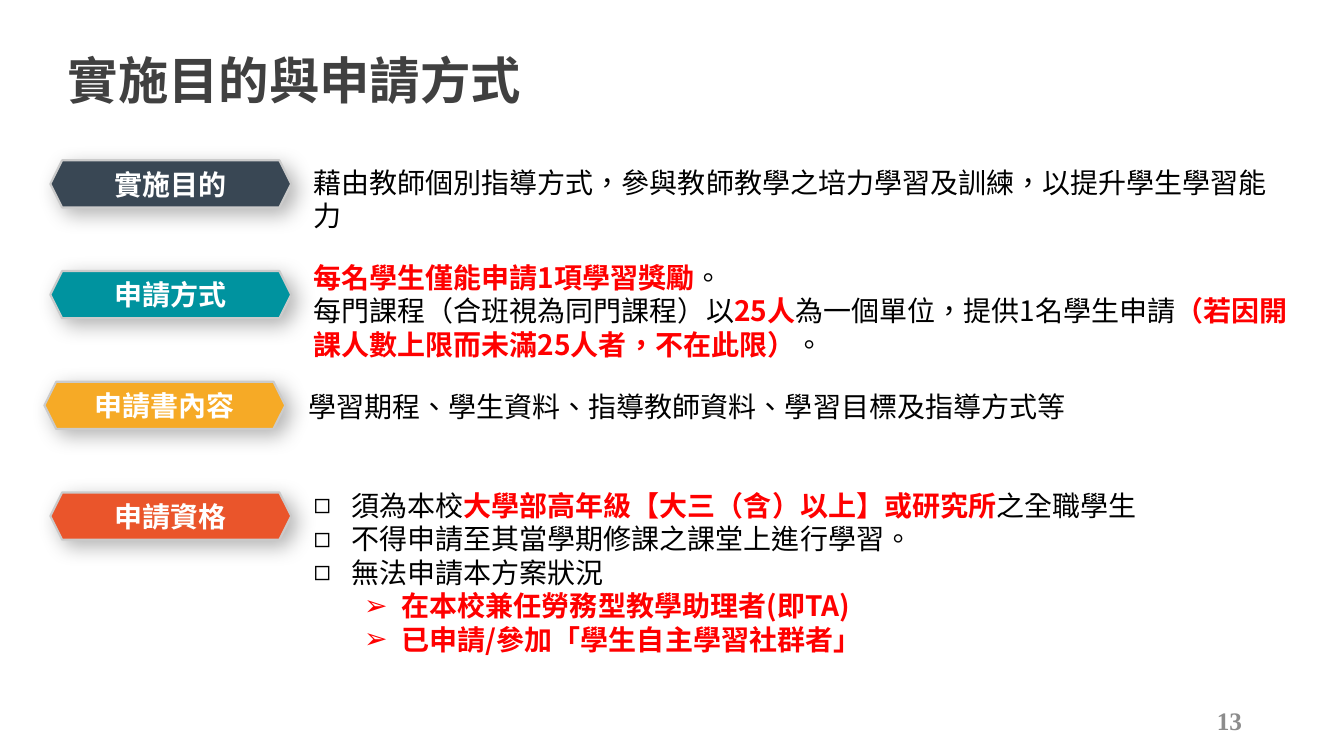
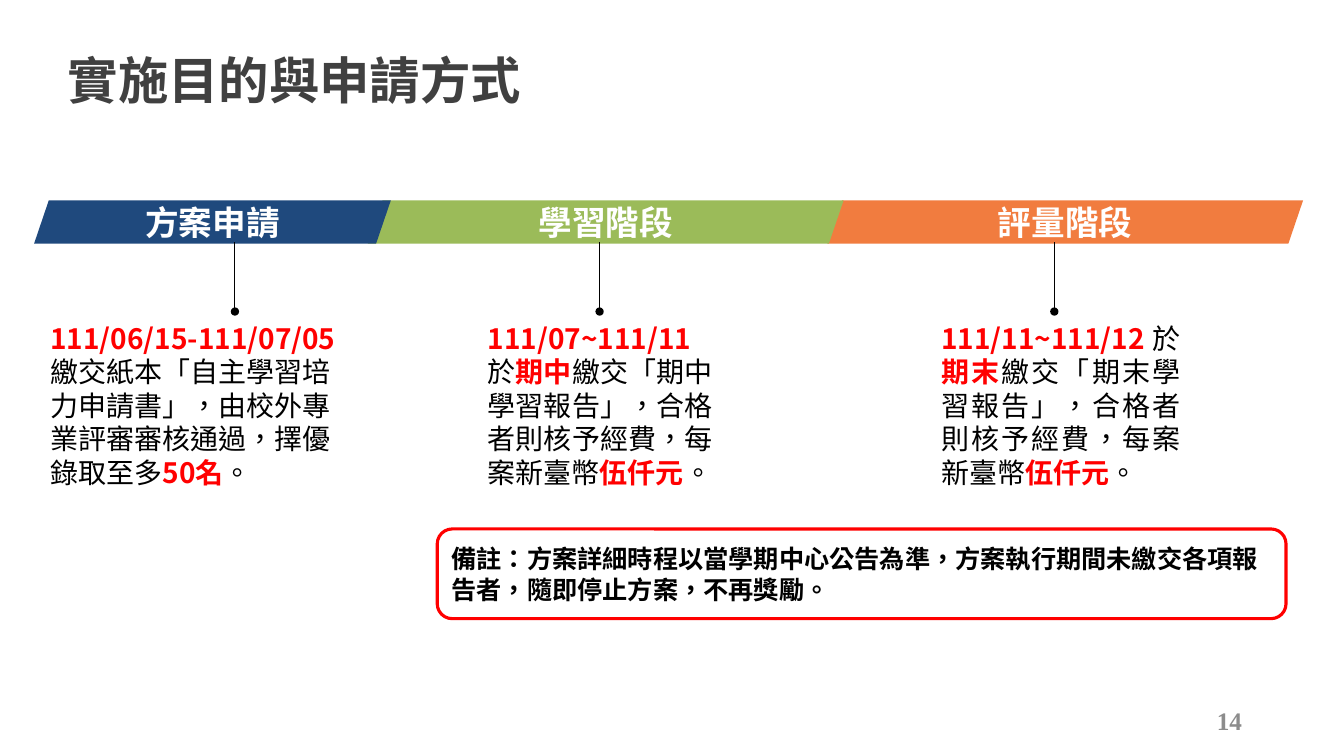
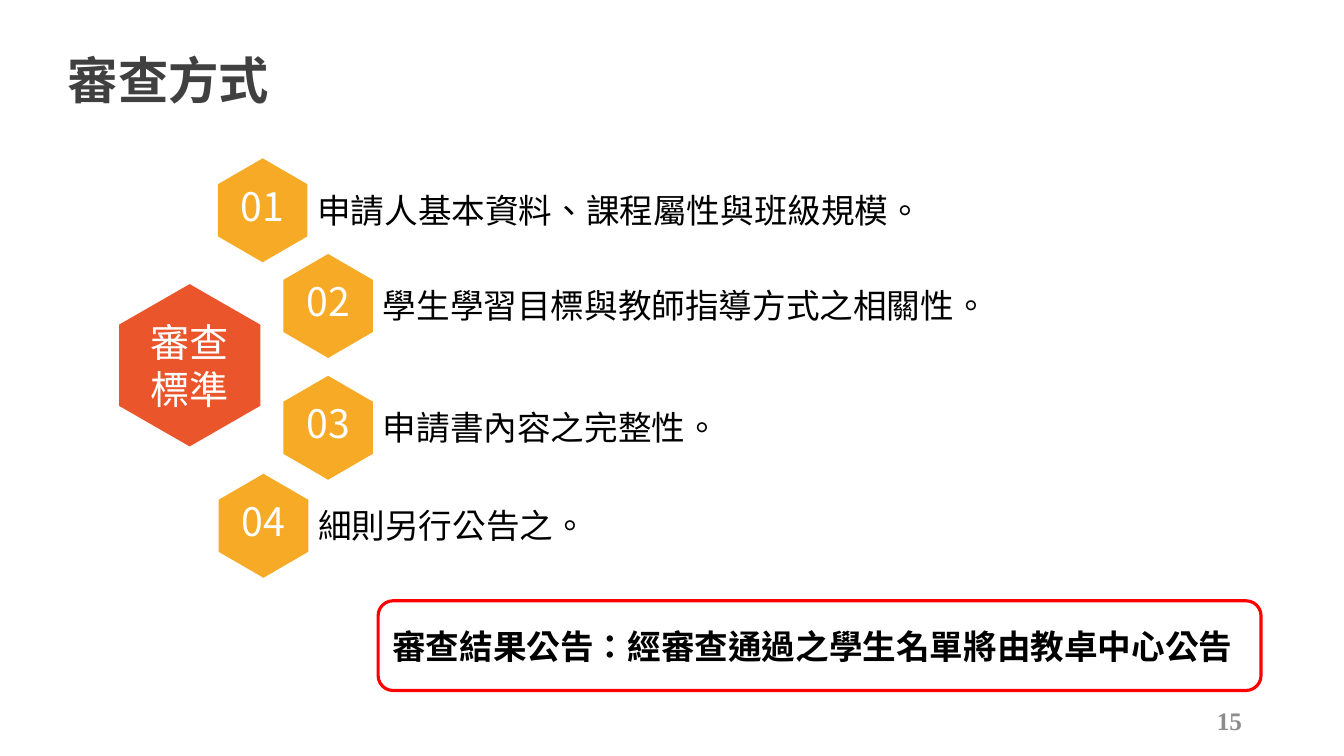
from lxml import etree
from pptx import Presentation
from pptx.dml.color import RGBColor
from pptx.enum import shapes, text
from pptx.oxml import parse_xml
from pptx.oxml.ns import nsdecls, qn
from pptx.util import Cm, Pt

FONT = "Noto Sans CJK SC"
NAVY, TEAL, AMBER, ORANGE = "394754", "00939F", "F6AA26", "EA552B"
BLACK, WHITE, RED = "000000", "FFFFFF", "FF0000"
LEFT, CENTER, RIGHT, JUSTIFY = (
    text.PP_ALIGN.LEFT, text.PP_ALIGN.CENTER, text.PP_ALIGN.RIGHT, text.PP_ALIGN.JUSTIFY)
TOP, MIDDLE = text.MSO_ANCHOR.TOP, text.MSO_ANCHOR.MIDDLE
SHAPE = shapes.MSO_SHAPE
rgb = RGBColor.from_string


def write(box, lines, size, color=BLACK, bold=False, align=LEFT, anchor=TOP, font=FONT, **frame_format):
    """Fill a box with paragraphs; parts between asterisks become bold red."""
    frame = box.text_frame
    frame_values = {"word_wrap": True, "auto_size": text.MSO_AUTO_SIZE.NONE,
                    "vertical_anchor": anchor, **frame_format}
    for name, value in frame_values.items():
        setattr(frame, name, value)
    for index, line in enumerate(lines):
        para = frame.add_paragraph() if index else frame.paragraphs[0]
        para.alignment, para.space_before = align, Pt(0)
        for part, words in enumerate(line.split("*")):
            if not words:
                continue
            strong = part % 2 == 1
            span = para.add_run()
            span.text = words
            font_values = {"name": font, "size": Pt(size), "bold": bold or strong}
            for name, value in font_values.items():
                setattr(span.font, name, value)
            span.font.color.rgb = rgb(RED if strong else color)
            properties = span._r.get_or_add_rPr()
            properties.set("lang", "zh-TW")
            etree.SubElement(properties, qn("a:ea"), typeface=font)


def paint(shape, fill, line=None, width=1):
    shape.shadow.inherit = False
    shape.fill.solid()
    shape.fill.fore_color.rgb = rgb(fill)
    if line:
        shape.line.color.rgb = rgb(line)
        shape.line.width = Pt(width)
    else:
        shape.line.fill.background()


deck = Presentation()
deck.slide_width, deck.slide_height = Cm(33.87), Cm(19.05)

# Titles and page numbers
pages = []
for number, (layout, title) in enumerate(
        [(1, "實施目的與申請方式"), (5, "實施目的與申請方式"), (5, "審查方式")], start=13):
    page = deck.slides.add_slide(deck.slide_layouts[layout])
    heading = page.shapes.title
    heading.left, heading.top, heading.width, heading.height = Cm(1.45), Cm(1.12), Cm(13.31), Cm(1.8)
    write(heading, [title], 36, "404040", bold=True)
    number_box = page.shapes.add_textbox(Cm(23.93), Cm(17.65), Cm(7.62), Cm(1.02))
    write(number_box, [str(number)], 18, "8C8C8C", True, RIGHT, MIDDLE, "Times New Roman")
    pages.append(page)
purpose, schedule, review = pages

# Purpose: four labelled rows, the last one a list
labels = [("實施目的", 1.27, NAVY), ("申請方式", 1.27, TEAL), ("申請書內容", 1.12, AMBER), ("申請資格", 1.27, ORANGE)]
for row, (label, left, color) in enumerate(labels):
    tag = purpose.shapes.add_shape(SHAPE.HEXAGON, Cm(left), Cm(4.04 + 2.79 * row), Cm(6.07), Cm(1.19))
    paint(tag, color, "CBCBCB", 1.5)
    write(tag, [label], 20, WHITE, True, CENTER, MIDDLE, margin_top=0, margin_bottom=0)
    effects = tag._element.spPr.find(qn("a:effectLst"))
    effects.append(parse_xml(
        f'<a:outerShdw {nsdecls("a")} blurRad="{Pt(15)}" dist="{Pt(6)}" dir="2700000" algn="tl" rotWithShape="0">'
        '<a:srgbClr val="000000"><a:alpha val="30000"/></a:srgbClr></a:outerShdw>'))

descriptions = [
    (7.65, 4.04, 25.22, 1.12, ["藉由教師個別指導方式，參與教師教學之培力學習及訓練，以提升學生學習能力"]),
    (7.65, 6.43, 25.22, 2.82, [
        "*每名學生僅能申請1項學習獎勵*。",
        "每門課程（合班視為同門課程）以*25人*為一個單位，提供1名學生申請"
        "*（若因開課人數上限而未滿25人者，不在此限）*。"]),
    (7.52, 9.7, 26.19, 1.12, ["學習期程、學生資料、指導教師資料、學習目標及指導方式等"]),
]
for left, top, width, height, lines in descriptions:
    write(purpose.shapes.add_textbox(Cm(left), Cm(top), Cm(width), Cm(height)), lines, 20)

rules = purpose.placeholders[1]
rules.left, rules.top, rules.width, rules.height = Cm(7.65), Cm(12.17), Cm(25.93), Cm(4.52)
write(rules, [
    "須為本校*大學部高年級【大三（含）以上】或研究所*之全職學生",
    "不得申請至其當學期修課之課堂上進行學習。",
    "無法申請本方案狀況",
    "*在本校兼任勞務型教學助理者(即TA)*",
    "*已申請/參加「學生自主學習社群者」*"], 20)
for index, para in enumerate(rules.text_frame.paragraphs):
    para.level = int(index > 2)
    bullet, indent = ("➢", 2.22) if para.level else ("◻", 0.95)
    properties = para._p.get_or_add_pPr()
    properties.set("marL", str(Cm(indent)))
    properties.set("indent", str(Cm(-0.95)))
    etree.SubElement(properties, qn("a:buChar"), char=bullet)

# Schedule: three phases, drawn from the right so that each overlaps the next
phases = [
    ("方案申請", "1F497D", 0.86, 8.99, 5.92, 1.02, 8.15, LEFT, [
        "*111/06/15-111/07/05*",
        "繳交紙本「自主學習培力申請書」，由校外專業評審審核通過，擇優錄取至多*50名*。"]),
    ("學習階段", "9BBB59", 9.27, 11.99, 15.11, 12.04, 6.17, JUSTIFY, [
        "*111/07~111/11*",
        "於*期中*繳交「期中學習報告」，合格者則核予經費，每案新臺幣*伍仟元*。"]),
    ("評量階段", "F17C3F", 20.85, 11.99, 26.57, 23.47, 6.53, JUSTIFY, [
        "*111/11~111/12*於*期末*繳交「期末學習報告」，合格者則核予經費，每案新臺幣*伍仟元*。"]),
]
for label, color, left, width, stem, note_left, note_width, align, lines in reversed(phases):
    band = schedule.shapes.add_shape(SHAPE.PARALLELOGRAM, Cm(left), Cm(5.05), Cm(width), Cm(1.09))
    band.adjustments[0] = 0.34
    paint(band, color)
    write(band, [label], 24, WHITE, True, CENTER, MIDDLE, margin_top=0, margin_bottom=0)
    pin = schedule.shapes.add_connector(shapes.MSO_CONNECTOR.STRAIGHT, Cm(stem), Cm(6.1), Cm(stem), Cm(7.85))
    pin.line.color.rgb = rgb(BLACK)
    pin.line.width = Pt(0.75)
    etree.SubElement(pin.line._get_or_add_ln(), qn("a:tailEnd"), type="oval")
    etree.SubElement(pin._element.spPr, qn("a:effectLst"))
    note = schedule.shapes.add_textbox(Cm(note_left), Cm(7.95), Cm(note_width), Cm(4.52))
    write(note, lines, 20, align=align, anchor=MIDDLE)

# Review: a central hexagon and four numbered criteria
hexagons = [
    ("審查標準", ORANGE, 3, 7.16, 3.56, 4.09, None),
    ("01", AMBER, 5.49, 3.99, 2.26, 2.62, "申請人基本資料、課程屬性與班級規模。"),
    ("02", AMBER, 7.14, 6.4, 2.26, 2.62, "學生學習目標與教師指導方式之相關性。"),
    ("03", AMBER, 7.14, 9.47, 2.26, 2.62, "申請書內容之完整性。"),
    ("04", AMBER, 5.51, 11.94, 2.26, 2.62, "細則另行公告之。"),
]
for label, color, left, top, width, height, criterion in hexagons:
    corners = [(Cm(left + width * x), Cm(top + height * y))
               for x, y in [(0, 0.75), (0.5, 1), (1, 0.75), (1, 0.25), (0.5, 0), (0, 0.25)]]
    builder = review.shapes.build_freeform(*corners[0])
    builder.add_line_segments(corners[1:], close=True)
    hexagon = builder.convert_to_shape()
    paint(hexagon, color)
    write(hexagon, [label], 28, WHITE, align=CENTER, anchor=MIDDLE, margin_left=Cm(0.5), margin_right=Cm(0.5),
          margin_top=0, margin_bottom=Cm(0.25) if criterion else 0)
    if criterion:
        box = review.shapes.add_textbox(Cm(left + width), Cm(top + 0.66), Cm(20), Cm(1.27))
        write(box, [criterion], 24)

# Red framed remarks
remarks = [
    (schedule, 11.02, 13.33, 21.39, 18,
     "備註：方案詳細時程以當學期中心公告為準，方案執行期間未繳交各項報告者，隨即停止方案，不再獎勵。"),
    (review, 9.53, 15.14, 22.25, 24, "審查結果公告：經審查通過之學生名單將由教卓中心公告"),
]
for page, left, top, width, size, remark in remarks:
    frame = page.shapes.add_shape(SHAPE.ROUNDED_RECTANGLE, Cm(left), Cm(top), Cm(width), Cm(2.26))
    paint(frame, WHITE, RED, 2.25)
    write(frame, [remark], size, bold=True, anchor=MIDDLE)

deck.save("out.pptx")
